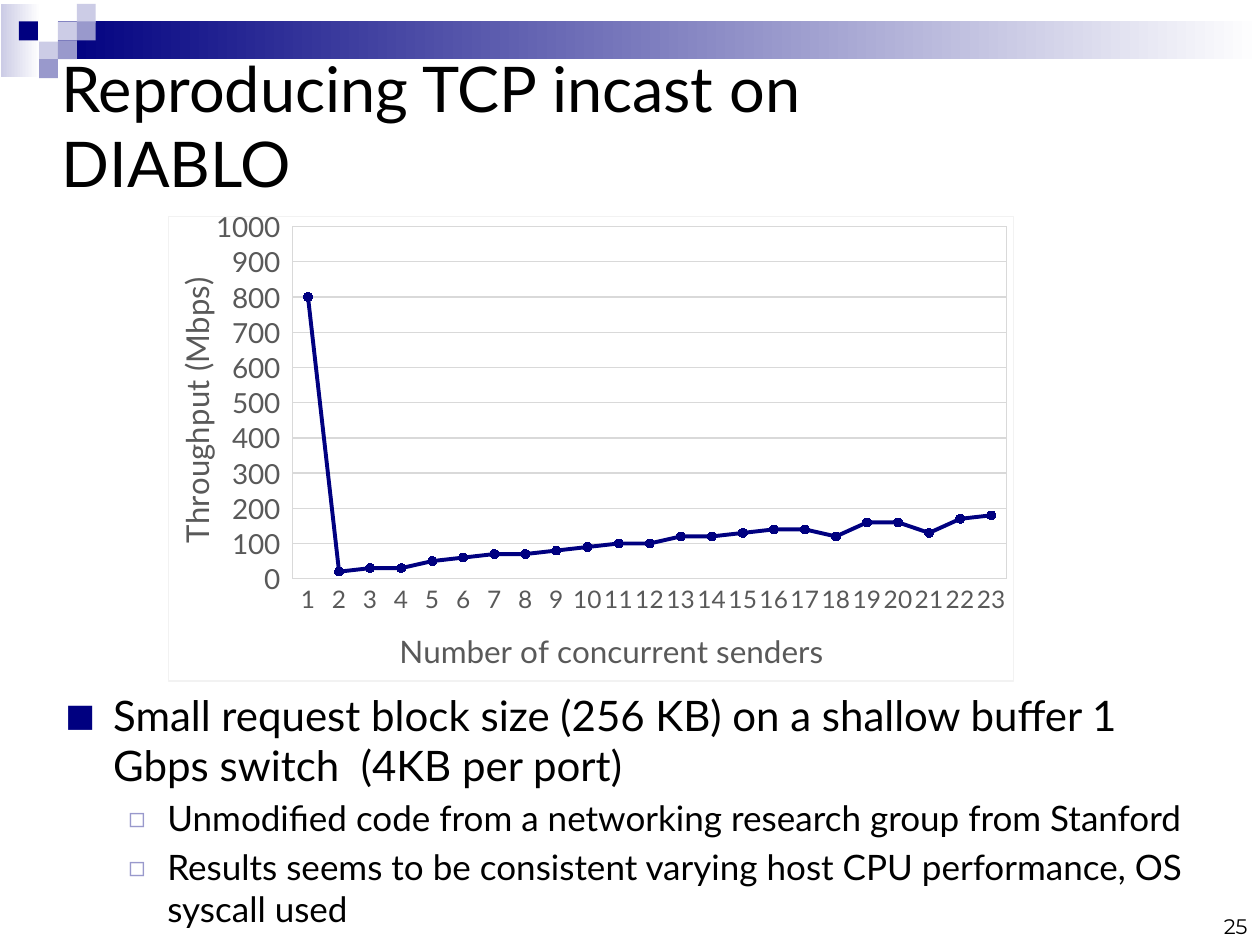
from lxml import etree
from pptx import Presentation
from pptx.chart.data import CategoryChartData
from pptx.dml.color import RGBColor
from pptx.enum.chart import XL_CHART_TYPE, XL_MARKER_STYLE, XL_TICK_MARK
from pptx.enum.shapes import MSO_SHAPE
from pptx.enum.text import MSO_ANCHOR, PP_ALIGN
from pptx.oxml import parse_xml
from pptx.util import Inches, Pt

RECT = MSO_SHAPE.RECTANGLE
LINE = XL_CHART_TYPE.LINE_MARKERS
CIRCLE = XL_MARKER_STYLE.CIRCLE
NO_TICK, OUT_TICK = XL_TICK_MARK.NONE, XL_TICK_MARK.OUTSIDE
TOP, MIDDLE, BOTTOM = MSO_ANCHOR.TOP, MSO_ANCHOR.MIDDLE, MSO_ANCHOR.BOTTOM
LEFT, RIGHT = PP_ALIGN.LEFT, PP_ALIGN.RIGHT

NAVY = RGBColor(0x00, 0x00, 0x80)
MID = RGBColor(0x99, 0x99, 0xCC)
PALE = RGBColor(0xCC, 0xCC, 0xE6)
WHITE = RGBColor(0xFF, 0xFF, 0xFF)
BLACK = RGBColor(0x00, 0x00, 0x00)
GRAY = RGBColor(0x59, 0x59, 0x59)
GRID = RGBColor(0xD9, 0xD9, 0xD9)
FRAME = RGBColor(0xF2, 0xF2, 0xF2)
FONT = "Lato"
A_NS = "http://schemas.openxmlformats.org/drawingml/2006/main"
C_NS = "http://schemas.openxmlformats.org/drawingml/2006/chart"
A, C = f"{{{A_NS}}}", f"{{{C_NS}}}"

SPEEDS = (800, 20, 30, 30, 50, 60, 70, 70, 80, 90, 100, 100,
          120, 120, 130, 140, 140, 120, 160, 160, 130, 170, 180)
# Text, level, size, left margin, hang, bullet, bullet colour, bullet percent, space before
POINTS = (
    ("Small request block size (256 KB) on a shallow buffer 1 Gbps switch  (4KB per port)",
     0, 24, 0.38, 0.38, "■", NAVY, 75, 0),
    ("Unmodified code from a networking research group from Stanford",
     1, 20, 0.81, 0.31, "◻", MID, 80, 4),
    ("Results seems to be consistent varying host CPU performance, OS syscall used",
     1, 20, 0.81, 0.31, "◻", MID, 80, 4),
)


def style(font, size, color, name=FONT):
    font.size, font.name, font.bold = Pt(size), name, False
    font.color.rgb = color


def add_box(slide, left, top, width, height, anchor=TOP):
    box = slide.shapes.add_textbox(Inches(left), Inches(top), Inches(width), Inches(height))
    frame = box.text_frame
    frame.word_wrap = True
    frame.vertical_anchor = anchor
    return frame


def add_text(para, text, size=24, color=BLACK, name=FONT, align=LEFT):
    para.alignment = align
    run = para.add_run()
    run.text = text
    style(run.font, size, color, name)


def add_rect(slide, left, top, width, height, color, fade=False):
    """Draw a borderless block, plain or fading to white at the right."""
    rect = slide.shapes.add_shape(RECT, Inches(left), Inches(top), Inches(width), Inches(height))
    rect.shadow.inherit = False
    rect.line.fill.background()
    if fade:
        rect.fill.gradient()
        rect.fill.gradient_angle = 0
        for stop, tone, place in zip(rect.fill.gradient_stops, (color, WHITE), (0, 1)):
            stop.color.rgb, stop.position = tone, place
    else:
        rect.fill.solid()
        rect.fill.fore_color.rgb = color


def add_banner(slide):
    add_rect(slide, 0.01, 0.03, 0.31, 0.58, PALE, fade=True)
    add_rect(slide, 0.46, 0.17, 9.55, 0.3, NAVY, fade=True)
    tiles = ((0.46, 0.17, PALE), (0.61, 0.03, PALE), (0.61, 0.17, MID), (0.31, 0.33, PALE),
             (0.15, 0.17, NAVY), (0.46, 0.32, MID), (0.31, 0.47, MID))
    for left, top, color in tiles:
        add_rect(slide, left, top, 0.15, 0.15, color)


def add_bullet(para, left, hang, mark, color, percent):
    props = para._p.get_or_add_pPr()
    props.set("marL", str(Inches(left)))
    props.set("indent", str(-Inches(hang)))
    tint = etree.SubElement(props, A + "buClr")
    etree.SubElement(tint, A + "srgbClr", val=str(color))
    etree.SubElement(props, A + "buSzPct", val=str(percent * 1000))
    etree.SubElement(props, A + "buFont", typeface=FONT)
    etree.SubElement(props, A + "buChar", char=mark)


def add_points(slide):
    frame = add_box(slide, 0.42, 5.42, 9.25, 1.41)
    for i, (text, level, size, left, hang, mark, color, percent, gap) in enumerate(POINTS):
        para = frame.add_paragraph() if i else frame.paragraphs[0]
        para.level = level
        add_bullet(para, left, hang, mark, color, percent)
        para.space_before = Pt(gap)
        add_text(para, text, size=size)


def make_props(border, fill=""):
    """Build the fill and border of a chart part."""
    return parse_xml(
        f'<c:spPr xmlns:c="{C_NS}" xmlns:a="{A_NS}">{fill}<a:ln w="9525"><a:solidFill>'
        f'<a:srgbClr val="{border}"/></a:solidFill></a:ln></c:spPr>')


def place_plot(plot, left, top, width, height):
    """Fix the inner plot area as fractions of the chart."""
    for old in plot.findall(C + "layout"):
        plot.remove(old)
    layout = etree.Element(C + "layout")
    manual = etree.SubElement(layout, C + "manualLayout")
    parts = (("layoutTarget", "inner"), ("xMode", "edge"), ("yMode", "edge"),
             ("x", left), ("y", top), ("w", width), ("h", height))
    for tag, value in parts:
        etree.SubElement(manual, C + tag, val=str(value))
    plot.insert(0, layout)


def style_axis(axis, title, size, tick, turn=0):
    axis.has_title = True
    add_text(axis.axis_title.text_frame.paragraphs[0], title, size=18, color=GRAY, align=None)
    body = next(axis.axis_title.element.iter(A + "bodyPr"))
    body.set("rot", str(turn * 60000))
    body.set("vert", "horz")
    axis.major_tick_mark, axis.minor_tick_mark = tick, NO_TICK
    style(axis.tick_labels.font, size, GRAY)


def add_graph(slide):
    data = CategoryChartData()
    data.categories = [str(n) for n in range(1, len(SPEEDS) + 1)]
    data.add_series("Series 1", SPEEDS)
    chart = slide.shapes.add_chart(
        LINE, Inches(1.33), Inches(1.67), Inches(6.72), Inches(3.74), data).chart
    chart.has_legend = chart.has_title = False
    style(chart.font, 10, BLACK)

    senders, speed = chart.category_axis, chart.value_axis
    style_axis(senders, "Number of concurrent senders", 14, NO_TICK)
    style_axis(speed, "Throughput (Mbps)", 16, OUT_TICK, turn=-90)
    speed.minimum_scale, speed.maximum_scale, speed.major_unit = 0, 1000, 100
    speed.has_major_gridlines = True
    speed.format.line.fill.background()
    for line in (senders.format.line, speed.major_gridlines.format.line):
        line.color.rgb, line.width = GRID, Pt(0.75)

    chart.plots[0].vary_by_categories = False
    series = chart.plots[0].series[0]
    series.smooth = False
    series.format.line.color.rgb, series.format.line.width = NAVY, Pt(2.25)
    series.marker.style, series.marker.size = CIRCLE, 5
    series.marker.format.fill.solid()
    series.marker.format.fill.fore_color.rgb = NAVY
    series.marker.format.line.color.rgb = NAVY

    body = chart.element.find(C + "chart")
    plot = body.find(C + "plotArea")
    place_plot(plot, 0.147, 0.022, 0.845, 0.758)
    plot.append(make_props(GRID))
    white = f'<a:solidFill><a:srgbClr val="{WHITE}"/></a:solidFill>'
    body.addnext(make_props(FRAME, white))


def main():
    deck = Presentation()
    deck.slide_width, deck.slide_height = Inches(10), Inches(7.5)
    slide = deck.slides.add_slide(deck.slide_layouts[6])
    add_banner(slide)
    add_points(slide)
    page = add_box(slide, 7.67, 7.24, 2.33, 0.26, anchor=BOTTOM)
    add_text(page.paragraphs[0], "25", size=12, name="Montserrat", align=RIGHT)
    title = add_box(slide, 0.39, 0.58, 8, 0.82, anchor=MIDDLE)
    add_text(title.paragraphs[0], "Reproducing TCP incast on DIABLO", size=36)
    add_graph(slide)
    deck.save("out.pptx")


if __name__ == "__main__":
    main()
